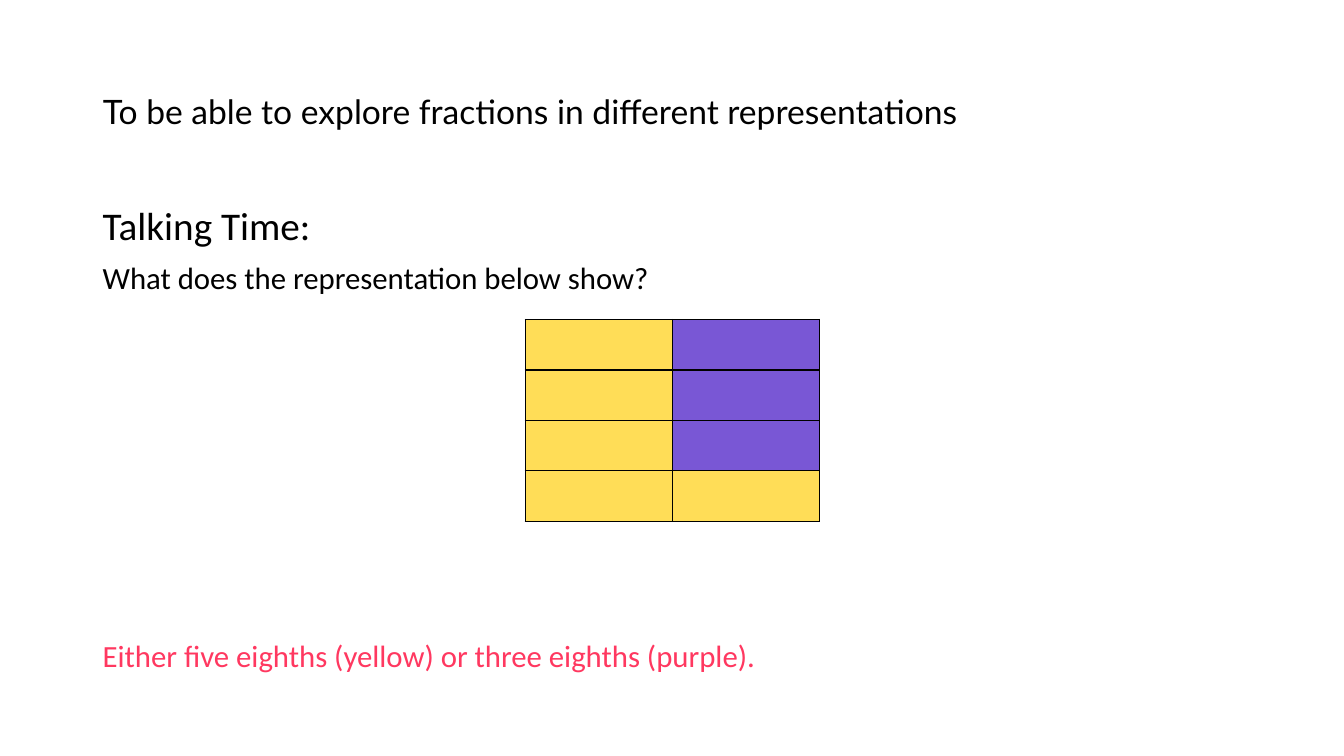
from dataclasses import dataclass

import pptx
import pptx.dml.color
import pptx.enum.shapes
import pptx.enum.text
import pptx.oxml
import pptx.oxml.ns
import pptx.util
from lxml import etree

Inches = pptx.util.Inches
Pt = pptx.util.Pt


@dataclass(frozen=True)
class Theme:
    title_font: str = "Lato"
    body_font: str = "Calibri"
    title_size: int = 24
    heading_size: int = 28
    body_size: int = 22
    text: str = "000000"
    answer: str = "FF3860"
    yellow: str = "FFDD57"
    purple: str = "7957D5"
    border: str = "000000"
    panel: str = "FFFFFF"
    panel_opacity: int = 90


THEME = Theme()
LEFT_MARGIN = 0.92


def rgb(value):
    return pptx.dml.color.RGBColor.from_string(value)


def place(shape, left, top, width, height):
    shape.left, shape.top = Inches(left), Inches(top)
    shape.width, shape.height = Inches(width), Inches(height)


def add_panel(slide):
    """Add the translucent panel behind everything else on the slide."""
    panel = slide.shapes.add_shape(
        pptx.enum.shapes.MSO_SHAPE.RECTANGLE,
        Inches(0.17), Inches(0.15), Inches(13), Inches(7.22))
    panel.shadow.inherit = False
    panel.fill.solid()
    panel.fill.fore_color.rgb = rgb(THEME.panel)
    color = panel._element.spPr.find(
        f'{pptx.oxml.ns.qn("a:solidFill")}/{pptx.oxml.ns.qn("a:srgbClr")}')
    alpha = etree.SubElement(color, pptx.oxml.ns.qn("a:alpha"))
    alpha.set("val", str(THEME.panel_opacity * 1000))
    panel.line.color.rgb = rgb(THEME.panel)
    panel.line.width = Pt(1)
    slide.shapes._spTree.insert(2, panel._element)


def write_paragraph(paragraph, text, font, size, color, space_before=0):
    paragraph.text = text
    layout = {
        "alignment": pptx.enum.text.PP_ALIGN.LEFT,
        "line_spacing": 0.9,
        "space_before": Pt(space_before),
    }
    for name, value in layout.items():
        setattr(paragraph, name, value)
    for name, value in {"name": font, "size": Pt(size)}.items():
        setattr(paragraph.font, name, value)
    paragraph.font.color.rgb = rgb(color)


def format_frame(frame, anchor):
    settings = {
        "word_wrap": True,
        "auto_size": pptx.enum.text.MSO_AUTO_SIZE.NONE,
        "vertical_anchor": anchor,
    }
    for name, value in settings.items():
        setattr(frame, name, value)


def add_title(slide, text):
    title = slide.shapes.title
    place(title, LEFT_MARGIN, 0.4, 9.6, 1.45)
    format_frame(title.text_frame, pptx.enum.text.MSO_ANCHOR.MIDDLE)
    write_paragraph(title.text_frame.paragraphs[0], text,
                    THEME.title_font, THEME.title_size, THEME.text)


def add_text(slide, top, height, lines):
    """Add a text box from (text, size, color) lines."""
    box = slide.shapes.add_textbox(
        Inches(LEFT_MARGIN), Inches(top), Inches(11.5), Inches(height))
    frame = box.text_frame
    format_frame(frame, pptx.enum.text.MSO_ANCHOR.TOP)
    for index, (text, size, color) in enumerate(lines):
        paragraph = frame.add_paragraph() if index else frame.paragraphs[0]
        write_paragraph(paragraph, text, THEME.body_font, size, color,
                        space_before=10 if index else 0)


def fill_cell(cell, color):
    cell.fill.solid()
    cell.fill.fore_color.rgb = rgb(color)
    properties = cell._tc.get_or_add_tcPr()
    for index, side in enumerate(("lnL", "lnR", "lnT", "lnB")):
        line = pptx.oxml.parse_xml(
            f'<a:{side} {pptx.oxml.ns.nsdecls("a")} w="{Pt(1)}">'
            f'<a:solidFill><a:srgbClr val="{THEME.border}"/></a:solidFill>'
            f'</a:{side}>')
        properties.insert(index, line)


def add_fraction_grid(slide, colors):
    rows, columns = len(colors), len(colors[0])
    grid = slide.shapes.add_table(
        rows, columns, Inches(5.21), Inches(3.17),
        Inches(1.46 * columns), Inches(0.5 * rows)).table
    grid.first_row = False
    grid.horz_banding = False
    for row, row_colors in enumerate(colors):
        for column, color in enumerate(row_colors):
            fill_cell(grid.cell(row, column), color)


def main():
    presentation = pptx.Presentation()
    presentation.slide_width = Inches(13.33)
    presentation.slide_height = Inches(7.5)
    slide = presentation.slides.add_slide(presentation.slide_layouts[5])

    add_panel(slide)
    add_title(slide, "To be able to explore fractions in different representations")
    add_text(slide, 2, 1.1, [
        ("Talking Time:", THEME.heading_size, THEME.text),
        ("What does the representation below show?", THEME.body_size, THEME.text),
    ])
    add_fraction_grid(
        slide,
        [(THEME.yellow, THEME.purple)] * 3 + [(THEME.yellow, THEME.yellow)])
    add_text(slide, 6.31, 0.45, [
        ("Either five eighths (yellow) or three eighths (purple).",
         THEME.body_size, THEME.answer),
    ])
    presentation.save("out.pptx")


if __name__ == "__main__":
    main()
